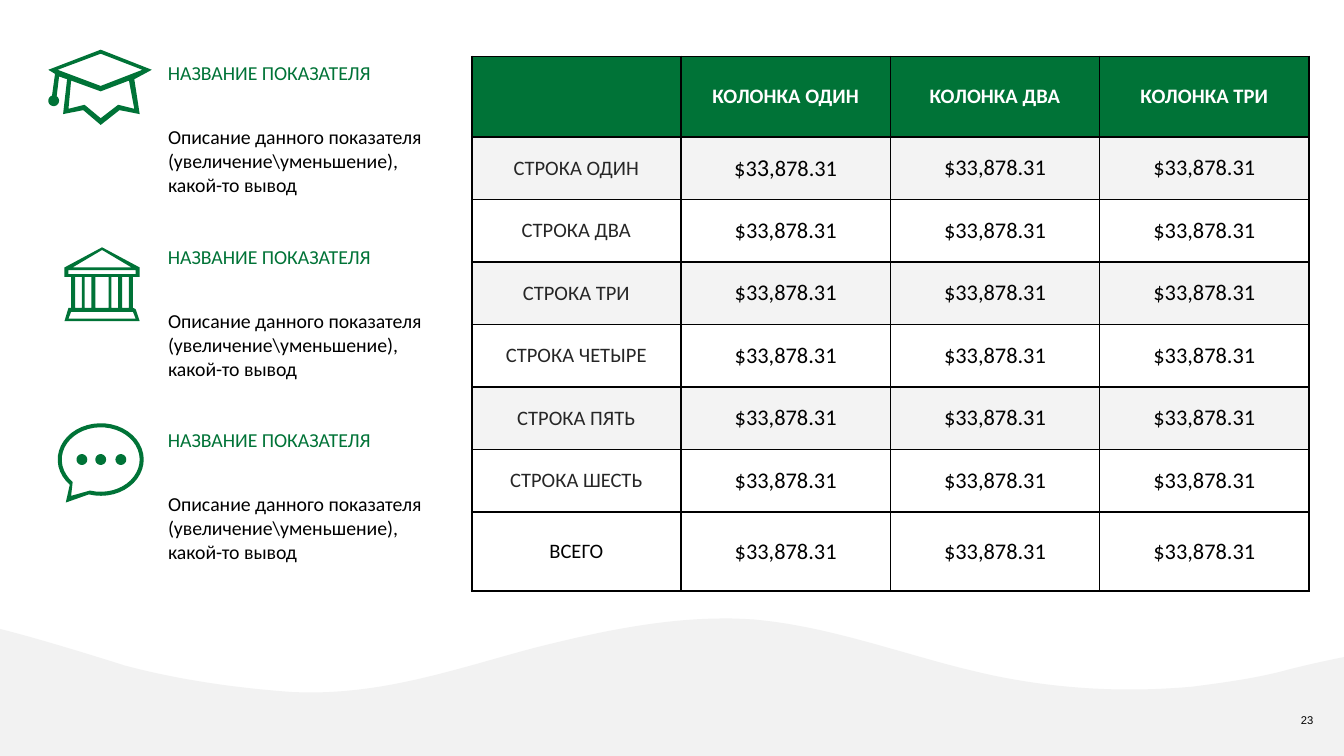
from dataclasses import dataclass
from math import cos, radians, sin

from lxml.etree import SubElement
from pptx import Presentation
from pptx.dml.color import RGBColor
from pptx.enum.text import MSO_ANCHOR, PP_ALIGN
from pptx.oxml.ns import qn
from pptx.slide import Slide
from pptx.table import _Cell
from pptx.text.text import TextFrame, _Paragraph
from pptx.util import Inches, Pt

Point = tuple[float, float]
Contour = list[Point]

PAGE_WIDTH = 10
PAGE_HEIGHT = PAGE_WIDTH * 9 / 16
GREEN, BLACK, WHITE = "007337", "000000", "FFFFFF"
CHARCOAL, BAND, WAVE = "262626", "F3F3F3", "F2F2F2"
AMOUNT = "$33,878.31"


@dataclass
class TextStyle:
    size: float
    color: str = BLACK
    bold: bool = False
    font: str = "Calibri"
    align: PP_ALIGN = PP_ALIGN.LEFT


@dataclass
class Indicator:
    top: float
    icon: list[Contour]
    title: str = "НАЗВАНИЕ ПОКАЗАТЕЛЯ"
    description: str = "Описание данного показателя (увеличение\\уменьшение), какой-то вывод"


@dataclass
class TableRow:
    label: str
    fill: str | None
    label_color: str = CHARCOAL


def color_of(code: str) -> RGBColor:
    return RGBColor.from_string(code)


def set_format(target: object, values: dict[str, object]) -> None:
    for name, value in values.items():
        setattr(target, name, value)


def arc(center: Point, radii: Point, start: float = 0, end: float = 360) -> Contour:
    """Points along an ellipse; degrees run clockwise from the right."""
    angles = [radians(start + (end - start) * step / 40) for step in range(41)]
    return [(center[0] + radii[0] * cos(a), center[1] + radii[1] * sin(a)) for a in angles]


def bezier(start: Point, first: Point, second: Point, end: Point) -> Contour:
    points = []
    for step in range(1, 21):
        t = step / 20
        weights = ((1 - t) ** 3, 3 * t * (1 - t) ** 2, 3 * t * t * (1 - t), t ** 3)
        controls = (start, first, second, end)
        points.append(tuple(sum(w * c[axis] for w, c in zip(weights, controls)) for axis in (0, 1)))
    return points


def rectangle(left: float, top: float, right: float, bottom: float) -> Contour:
    return [(left, top), (right, top), (right, bottom), (left, bottom)]


def graduation_cap() -> list[Contour]:
    outline = [(1.13, 0.52), (0.75, 0.37), (0.36, 0.52), (0.41, 0.55)]
    outline += arc((0.4, 0.75), (0.04, 0.04), 252, -56)
    outline += [(0.44, 0.57), (0.5, 0.59), (0.47, 0.85), (0.62, 0.82), (0.75, 0.93),
                (0.89, 0.82), (1.04, 0.85), (1, 0.59)]
    board = [(0.75, 0.64), (0.43, 0.52), (0.75, 0.4), (1.06, 0.52)]
    band = [(1, 0.81), (0.88, 0.78), (0.75, 0.88), (0.63, 0.78), (0.51, 0.81),
            (0.53, 0.6), (0.75, 0.68), (0.96, 0.6)]
    return [outline, board, band]


def bank() -> list[Contour]:
    outline = [(0.76, 1.84), (1.04, 1.99), (1.04, 2.06), (0.99, 2.06), (0.99, 2.29), (1.01, 2.3),
               (1.04, 2.39), (0.48, 2.39), (0.51, 2.29), (0.53, 2.29), (0.53, 2.06),
               (0.48, 2.06), (0.48, 1.99)]
    roof = [(0.76, 1.86), (0.98, 1.99), (0.54, 1.99)]
    base = [(0.99, 2.32), (1.01, 2.37), (0.51, 2.37), (0.53, 2.32)]
    gaps = [(0.56, 0.61), (0.63, 0.68), (0.71, 0.81), (0.83, 0.88), (0.91, 0.96)]
    columns = [rectangle(left, 2.06, right, 2.29) for left, right in gaps]
    return [outline, roof, rectangle(0.51, 2.01, 1.01, 2.04), base, *columns]


def speech_bubble() -> list[Contour]:
    center = (0.75, 3.42)
    outer = arc(center, (0.32, 0.27), 136, 466) + [(0.49, 3.74)]
    inner = arc(center, (0.29, 0.24), 136, 466) + [(0.53, 3.69)]
    dots = [arc((x, 3.42), (0.04, 0.04)) for x in (0.61, 0.75, 0.9)]
    return [outer, inner, *dots]


def wave() -> Contour:
    top = [(0, 4.68), (0.32, 4.76), (0.86, 4.93), (0.92, 4.95), (1.33, 5.06), (1.76, 5.12),
           (2.18, 5.15), (2.83, 5.18), (3.38, 4.98), (3.98, 4.82), (4.5, 4.69), (5.06, 4.57),
           (5.61, 4.61), (6.17, 4.66), (6.69, 4.86), (7.23, 4.99), (7.76, 5.12), (8.31, 5.16),
           (8.87, 5.11), (9.1, 5.08), (9.33, 5.05), (9.56, 4.99), (9.59, 4.98), (9.84, 4.92),
           (PAGE_WIDTH, 4.89)]
    points = top[:1]
    for index in range(0, len(top) - 1, 3):
        points += bezier(*top[index:index + 4])
    return points + [(PAGE_WIDTH, PAGE_HEIGHT), (0, PAGE_HEIGHT)]


def draw_outline(page: Slide, contours: list[Contour], fill: str) -> None:
    """Draw one filled shape; contours inside others cut holes."""
    scaled = [[(Inches(x), Inches(y)) for x, y in contour] for contour in contours]
    builder = page.shapes.build_freeform(*scaled[0][0], scale=1.0)
    builder.add_line_segments(scaled[0][1:], close=True)
    for contour in scaled[1:]:
        builder.move_to(*contour[0])
        builder.add_line_segments(contour[1:], close=True)
    shape = builder.convert_to_shape()
    shape.shadow.inherit = False
    shape.fill.solid()
    shape.fill.fore_color.rgb = color_of(fill)
    shape.line.fill.background()


def add_span(para: _Paragraph, text: str, style: TextStyle) -> None:
    span = para.add_run()
    span.text = text
    set_format(span.font, {"name": style.font, "size": Pt(style.size), "bold": style.bold})
    span.font.color.rgb = color_of(style.color)


def write_text(frame: TextFrame, text: str, style: TextStyle) -> None:
    para = frame.paragraphs[0]
    para.alignment = style.align
    add_span(para, text, style)


def add_text(page: Slide, left: float, top: float, width: float, height: float, text: str,
             style: TextStyle, side: float = 0.05, edge: float = 0.03) -> None:
    box = page.shapes.add_textbox(Inches(left), Inches(top), Inches(width), Inches(height))
    set_format(box.text_frame, {
        "word_wrap": True, "margin_left": Inches(side), "margin_right": Inches(side),
        "margin_top": Inches(edge), "margin_bottom": Inches(edge)})
    write_text(box.text_frame, text, style)


def format_cell(cell: _Cell, fill: str | None) -> None:
    """Set margins, black borders and fill."""
    margin = Inches(0.02)
    set_format(cell, {"vertical_anchor": MSO_ANCHOR.MIDDLE, "margin_left": margin,
                      "margin_right": margin, "margin_top": margin, "margin_bottom": margin})
    properties = cell._tc.get_or_add_tcPr()
    for side in ("a:lnL", "a:lnR", "a:lnT", "a:lnB"):
        line = SubElement(properties, qn(side), w=str(Pt(1)))
        SubElement(SubElement(line, qn("a:solidFill")), qn("a:srgbClr"), val=BLACK)
    if fill is None:
        cell.fill.background()
    else:
        cell.fill.solid()
        cell.fill.fore_color.rgb = color_of(fill)


def add_amounts_table(page: Slide) -> None:
    headings = ["КОЛОНКА ОДИН", "КОЛОНКА ДВА", "КОЛОНКА ТРИ"]
    labels = ["ОДИН", "ДВА", "ТРИ", "ЧЕТЫРЕ", "ПЯТЬ", "ШЕСТЬ"]
    rows = [TableRow(f"СТРОКА {label}", (BAND, WHITE)[index % 2])
            for index, label in enumerate(labels)]
    rows.append(TableRow("ВСЕГО", None, BLACK))
    heights = [0.6] + [2.79 / len(labels)] * len(labels) + [0.59]
    table = page.shapes.add_table(len(heights), 4, Inches(3.51), Inches(0.42),
                                  Inches(6.23), Inches(3.98)).table
    set_format(table, {"first_row": False, "horz_banding": False})
    for row, height in zip(table.rows, heights):
        row.height = Inches(height)
    center = PP_ALIGN.CENTER
    amount_style = TextStyle(12, align=center)
    format_cell(table.cell(0, 0), GREEN)
    for column, heading in enumerate(headings, 1):
        cell = table.cell(0, column)
        format_cell(cell, GREEN)
        write_text(cell.text_frame, heading, TextStyle(11, WHITE, True, align=center))
    for index, row in enumerate(rows, 1):
        for column in range(4):
            cell = table.cell(index, column)
            format_cell(cell, row.fill)
            if column == 0:
                write_text(cell.text_frame, row.label, TextStyle(11, row.label_color, align=center))
            elif (index, column) == (1, 1):
                write_text(cell.text_frame, AMOUNT[:2], amount_style)
                add_span(cell.text_frame.paragraphs[0], AMOUNT[2], TextStyle(13))
                add_span(cell.text_frame.paragraphs[0], AMOUNT[3:], amount_style)
            else:
                write_text(cell.text_frame, AMOUNT, amount_style)


def main() -> None:
    deck = Presentation()
    set_format(deck, {"slide_width": Inches(PAGE_WIDTH), "slide_height": Inches(PAGE_HEIGHT)})
    page = deck.slides.add_slide(deck.slide_layouts[6])
    draw_outline(page, [wave()], WAVE)
    add_text(page, 8.89, 5.26, 0.98, 0.2, "23",
             TextStyle(6, font="Arial", align=PP_ALIGN.RIGHT), 0.1, 0.05)
    add_amounts_table(page)
    for item in (Indicator(0.42, graduation_cap()), Indicator(1.79, bank()),
                 Indicator(3.15, speech_bubble())):
        draw_outline(page, item.icon, GREEN)
        add_text(page, 1.2, item.top, 1.7, 0.27, item.title, TextStyle(10.6, GREEN))
        add_text(page, 1.2, item.top + 0.48, 2.01, 0.79, item.description, TextStyle(10.6))
    deck.save("out.pptx")


if __name__ == "__main__":
    main()
